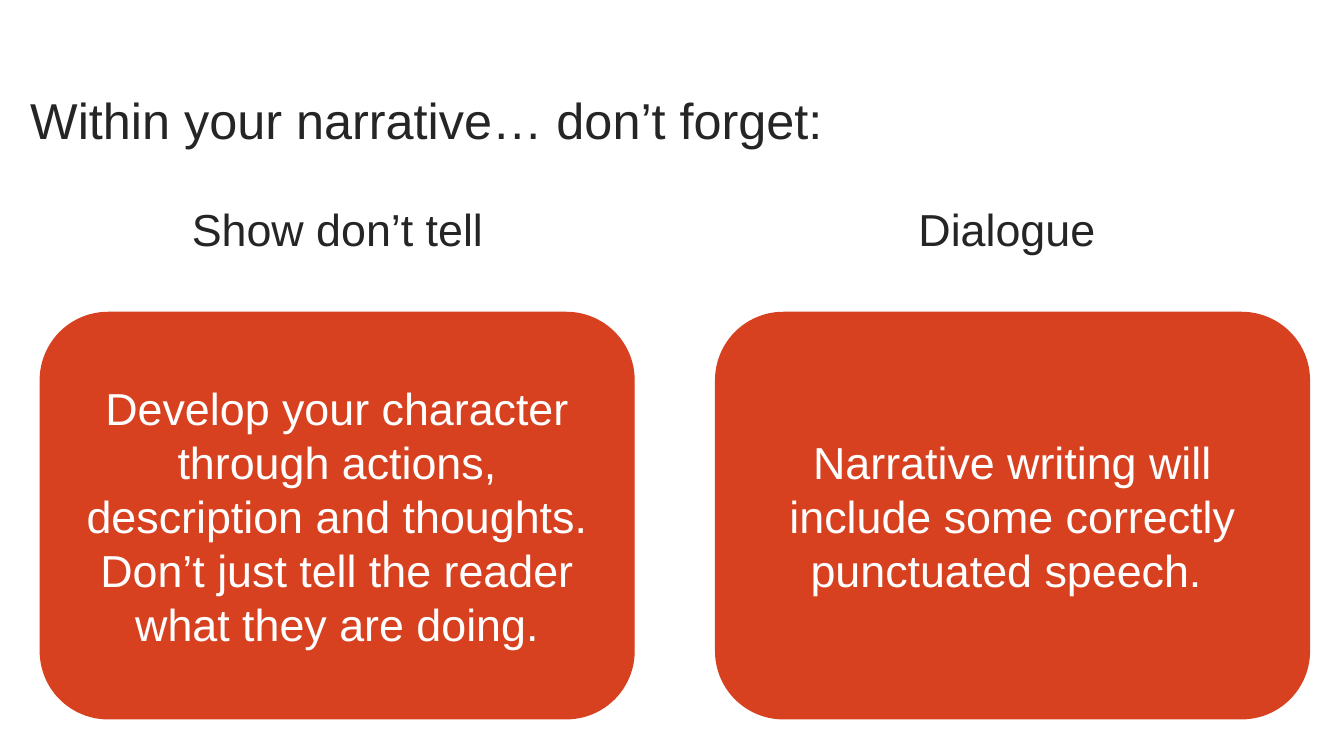
"""Build a slide with two pieces of narrative writing advice."""
from dataclasses import dataclass

from pptx import Presentation
from pptx.dml.color import RGBColor
from pptx.enum.shapes import MSO_SHAPE as SHAPE
from pptx.enum.text import MSO_ANCHOR as ANCHOR, MSO_AUTO_SIZE as AUTO, PP_ALIGN as ALIGN
from pptx.util import Pt

COLORS = {"text": "252525", "card": "D74120", "card_text": "FFFFFF"}


@dataclass
class Topic:
    """A heading with its advice card."""
    heading: str
    advice: str
    heading_left: float
    card_left: float


TOPICS = [
    Topic("Show don’t tell",
          "Develop your character through actions, description and thoughts. "
          "Don’t just tell the reader what they are doing.", 14.4, 28.8),
    Topic("Dialogue",
          "Narrative writing will include some correctly punctuated speech. ",
          492.5, 511.2),
]


def rgb(name: str) -> RGBColor:
    """Return a named colour."""
    return RGBColor.from_string(COLORS[name])


def set_text(s, text: str, size: float, color: str, align, anchor, spacing: float) -> None:
    """Put one formatted paragraph in a shape."""
    tf = s.text_frame
    tf.text = text
    tf.word_wrap = True
    tf.auto_size = AUTO.NONE
    tf.vertical_anchor = anchor
    p = tf.paragraphs[0]
    p.alignment = align
    p.line_spacing = spacing
    r = p.runs[0]
    r.font.name = "Arial"
    r.font.size = Pt(size)
    r.font.color.rgb = rgb(color)


def add_title(s, text: str) -> None:
    """Place and fill the title placeholder."""
    sp = s.shapes.title
    sp.left, sp.top, sp.width, sp.height = Pt(14.4), Pt(59.8), Pt(921.6), Pt(56.9)
    set_text(sp, text, 36, "text", ALIGN.LEFT, ANCHOR.MIDDLE, 0.9)


def add_heading(s, topic: Topic) -> None:
    """Draw the heading of a topic."""
    sp = s.shapes.add_textbox(Pt(topic.heading_left), Pt(144.7), Pt(453.6), Pt(339.8))
    set_text(sp, topic.heading, 32, "text", ALIGN.CENTER, ANCHOR.TOP, 0.9)


def add_card(s, topic: Topic) -> None:
    """Draw the advice card of a topic."""
    sp = s.shapes.add_shape(SHAPE.ROUNDED_RECTANGLE, Pt(topic.card_left), Pt(223.2),
                            Pt(424.1), Pt(290.2))
    sp.shadow.inherit = False
    sp.fill.solid()
    sp.fill.fore_color.rgb = rgb("card")
    sp.line.color.rgb = rgb("card")
    sp.line.width = Pt(1)
    set_text(sp, topic.advice, 32, "card_text", ALIGN.CENTER, ANCHOR.MIDDLE, 1.0)


def main() -> None:
    """Build and save the presentation."""
    prs = Presentation()
    prs.slide_width, prs.slide_height = Pt(960), Pt(540)
    s = prs.slides.add_slide(prs.slide_layouts[5])
    add_title(s, "Within your narrative… don’t forget:")
    for topic in TOPICS:
        add_heading(s, topic)
    for topic in TOPICS:
        add_card(s, topic)
    prs.save("out.pptx")


if __name__ == "__main__":
    main()
